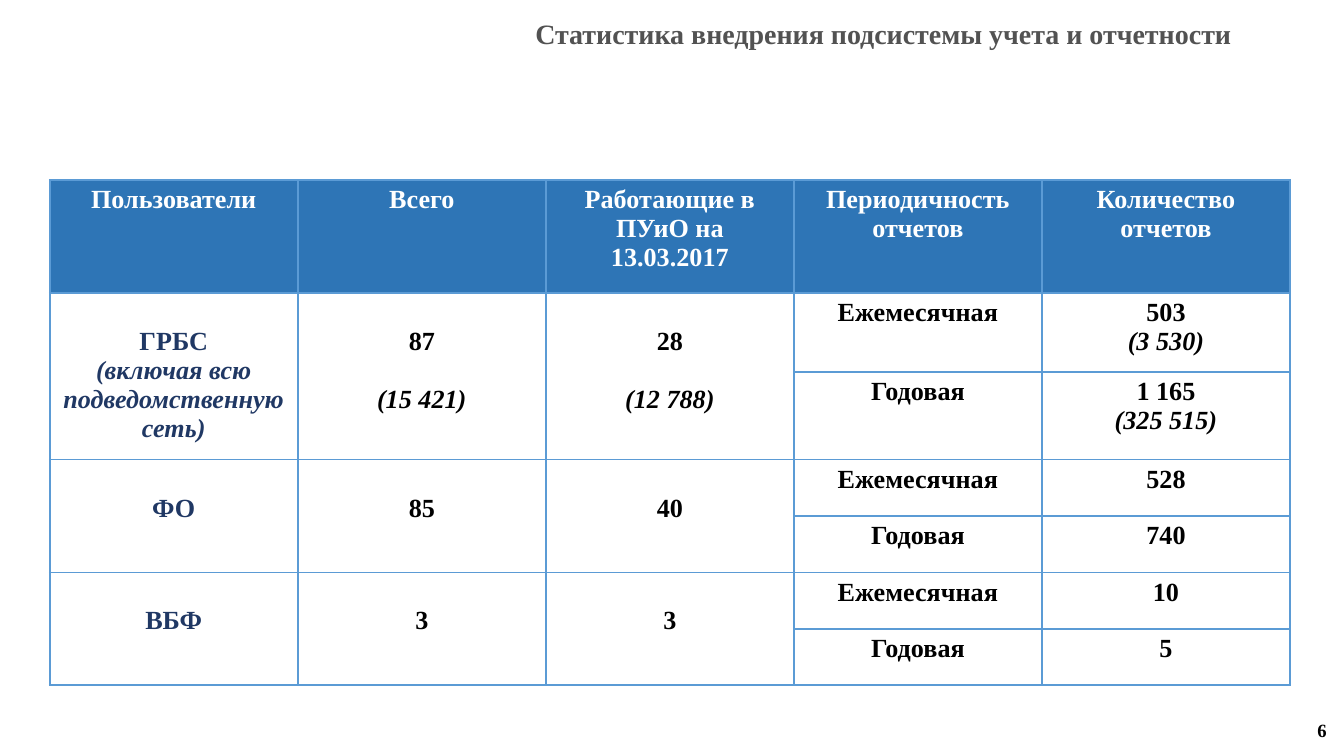
from lxml import etree
from pptx import Presentation
from pptx.dml.color import RGBColor
from pptx.enum.text import MSO_ANCHOR, PP_ALIGN
from pptx.oxml.ns import qn
from pptx.util import Inches, Pt

CENTER, RIGHT = PP_ALIGN.CENTER, PP_ALIGN.RIGHT
TOP, MIDDLE = MSO_ANCHOR.TOP, MSO_ANCHOR.MIDDLE
TITLE_ONLY = 5

FONT = "Times New Roman"
BLACK, WHITE, GRAY = "000000", "FFFFFF", "525252"
NAVY, HEADER_BLUE, BORDER_BLUE = "203864", "2E75B6", "5B9BD5"
LINE_HEIGHT = Pt(15.5)

TABLE_WIDTH = 9.23
ROW_HEIGHTS = [0.84, 0.59, 0.65, 0.42, 0.42, 0.42, 0.42]
HEADERS = ["Пользователи", "Всего", "Работающие в ПУиО на 13.03.2017",
           "Периодичность отчетов", "Количество отчетов"]
PERIODS = ["Ежемесячная", "Годовая"]

# Each group: user, total, working, then report counts for each period.
# The second line of a cell is set in italics.
GROUPS = [
    (["ГРБС", "(включая всю подведомственную сеть)"],
     ["87", "(15 421)"], ["28", "(12 788)"],
     [["503", "(3 530)"], ["1 165", "(325 515)"]]),
    (["ФО"], ["85"], ["40"], [["528"], ["740"]]),
    (["ВБФ"], ["3"], ["3"], [["10"], ["5"]]),
]


def color(hex_value):
    return RGBColor.from_string(hex_value)


def format_text(text_frame, size, hex_value, alignment=CENTER):
    for index, paragraph in enumerate(text_frame.paragraphs):
        paragraph.alignment = alignment
        for run in paragraph.runs:
            run.font.name = FONT
            run.font.size = Pt(size)
            run.font.bold = True
            run.font.italic = index > 0
            run.font.color.rgb = color(hex_value)


def format_frame(text_frame, anchor):
    text_frame.word_wrap = True
    text_frame.vertical_anchor = anchor
    text_frame.margin_left = text_frame.margin_right = Inches(0.07)
    text_frame.margin_top = text_frame.margin_bottom = Inches(0.04)


def place(shape, left, top, width, height):
    shape.left, shape.top = Inches(left), Inches(top)
    shape.width, shape.height = Inches(width), Inches(height)


def add_borders(cell):
    properties = cell._tc.get_or_add_tcPr()
    for side in ("a:lnL", "a:lnR", "a:lnT", "a:lnB"):
        line = etree.SubElement(properties, qn(side), w=str(Pt(1)))
        fill = etree.SubElement(line, qn("a:solidFill"))
        etree.SubElement(fill, qn("a:srgbClr"), val=BORDER_BLUE)


def fill_cell(cell, lines, hex_value=BLACK, background=WHITE, lowered=False):
    """Write a cell; a lowered one starts one line further down."""
    cell.text_frame.text = "\n".join(lines)
    format_text(cell.text_frame, 14, hex_value)
    cell.vertical_anchor = TOP
    cell.margin_left = cell.margin_right = Inches(0.07)
    cell.margin_top = Inches(0.04) + (LINE_HEIGHT if lowered else 0)
    cell.margin_bottom = Inches(0.04)
    if background:
        cell.fill.solid()
        cell.fill.fore_color.rgb = color(background)
    else:
        cell.fill.background()


def add_title(slide):
    title = slide.shapes.title
    place(title, 3.29, 0.08, 6.57, 0.33)
    title.text_frame.text = "Статистика внедрения подсистемы учета и отчетности"
    format_frame(title.text_frame, TOP)
    format_text(title.text_frame, 15, GRAY)


def add_page_number(slide):
    box = slide.shapes.add_textbox(Inches(7.69), Inches(5.28), Inches(2.25), Inches(0.3))
    box.text_frame.text = "6"
    format_frame(box.text_frame, MIDDLE)
    format_text(box.text_frame, 10, BLACK, RIGHT)


def add_statistics_table(slide):
    table = slide.shapes.add_table(
        len(ROW_HEIGHTS), len(HEADERS), Inches(0.37), Inches(1.34),
        Inches(TABLE_WIDTH), Inches(sum(ROW_HEIGHTS))).table
    table.horz_banding = False
    for column in table.columns:
        column.width = Inches(TABLE_WIDTH / len(HEADERS))
    for row, height in zip(table.rows, ROW_HEIGHTS):
        row.height = Inches(height)
    for cell in table.iter_cells():
        add_borders(cell)
        cell.fill.background()

    # Header row
    for column, header in enumerate(HEADERS):
        fill_cell(table.cell(0, column), [header], WHITE, HEADER_BLUE)

    # Two rows per user group, the first three columns merged over both
    for group, (user, total, working, counts) in enumerate(GROUPS):
        first_row = 1 + group * len(PERIODS)
        for column, lines in enumerate((user, total, working)):
            cell = table.cell(first_row, column)
            cell.merge(table.cell(first_row + 1, column))
            fill_cell(cell, lines, BLACK if column else NAVY, lowered=True)
            if column:
                for paragraph in cell.text_frame.paragraphs[1:]:
                    paragraph.space_before = LINE_HEIGHT
        for row, (period, count) in enumerate(zip(PERIODS, counts), first_row):
            fill_cell(table.cell(row, 3), [period], background=None)
            fill_cell(table.cell(row, 4), count)


def main():
    presentation = Presentation()
    # Widescreen 16:9
    presentation.slide_width = Inches(10)
    presentation.slide_height = Inches(10 * 9 / 16)
    slide = presentation.slides.add_slide(presentation.slide_layouts[TITLE_ONLY])
    add_page_number(slide)
    add_statistics_table(slide)
    add_title(slide)
    presentation.save("out.pptx")


if __name__ == "__main__":
    main()
